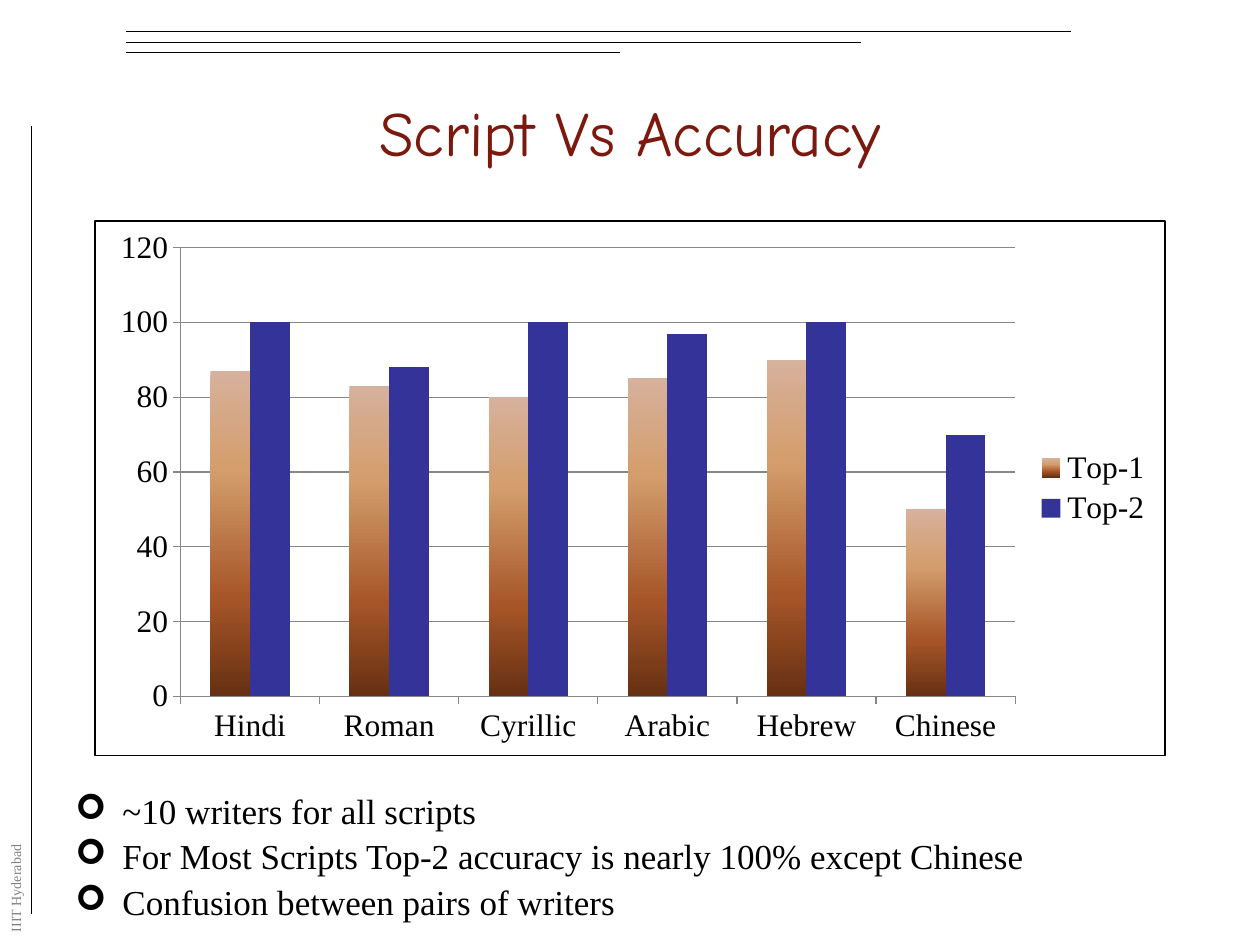
from dataclasses import dataclass

from lxml.etree import SubElement
from pptx import Presentation
from pptx.chart.data import CategoryChartData
from pptx.dml.color import RGBColor
from pptx.enum.chart import XL_CHART_TYPE, XL_LEGEND_POSITION, XL_TICK_MARK
from pptx.enum.shapes import MSO_CONNECTOR
from pptx.enum.text import MSO_ANCHOR, PP_ALIGN
from pptx.oxml import parse_xml
from pptx.oxml.ns import nsdecls, qn
from pptx.util import Cm, Pt


@dataclass(frozen=True)
class Theme:
    ink: str = "000000"
    title: str = "7B190F"
    muted: str = "808080"
    grid: str = "878787"
    second: str = "333399"
    fade: tuple = ((0, "D6B19C"), (30, "D49E6C"), (70, "A65528"), (100, "663012"))
    head: str = "Comic Neue"
    body: str = "Times New Roman"
    big: float = 36
    mid: float = 20
    label: float = 18
    small: float = 8
    thin: float = 0.75


def write(para, text, *, font, size, color, align=PP_ALIGN.LEFT, bullet=None,
          indent=0, before=0, spacing=None):
    """Write one formatted paragraph."""
    props = para._p.get_or_add_pPr()
    if bullet:
        SubElement(props, qn("a:buFont"), typeface="Wingdings")
        SubElement(props, qn("a:buChar"), char=bullet)
        props.set("marL", str(Cm(indent)))
        props.set("indent", str(-Cm(indent)))
    para.alignment = align
    if before:
        para.space_before = Pt(before)
    if spacing:
        para.line_spacing = spacing
    run = para.add_run()
    run.text = text
    run.font.name = font
    run.font.size = Pt(size)
    run.font.color.rgb = RGBColor.from_string(color)


class Deck:
    """Hold the style and the current slide."""

    def __init__(self, theme):
        """Open a deck with one blank slide."""
        self.theme = theme
        self.file = Presentation()
        self.file.slide_width, self.file.slide_height = Cm(25.4), Cm(19.05)
        self.slide = self.file.slides.add_slide(self.file.slide_layouts[6])

    def stroke(self, line, color):
        """Give a line the thin style."""
        line.color.rgb = RGBColor.from_string(color)
        line.width = Pt(self.theme.thin)

    def rule(self, *ends):
        """Draw a thin straight line."""
        line = self.slide.shapes.add_connector(MSO_CONNECTOR.STRAIGHT, *map(Cm, ends))
        self.stroke(line.line, self.theme.ink)
        SubElement(line._element.spPr, qn("a:effectLst"))

    def text(self, place, lines, *, anchor=MSO_ANCHOR.TOP, turn=0, wrap=True,
             before=0, **style):
        """Add a text box with one paragraph a line."""
        box = self.slide.shapes.add_textbox(*map(Cm, place))
        box.rotation = turn
        frame = box.text_frame
        frame.word_wrap = wrap
        frame.vertical_anchor = anchor
        for index, line in enumerate(lines):
            para = frame.add_paragraph() if index else frame.paragraphs[0]
            write(para, line, before=before if index else 0, **style)

    def chart(self, place, names, rows, layout):
        """Add the framed column chart."""
        theme = self.theme
        data = CategoryChartData()
        data.categories = names
        for name, values in rows.items():
            data.add_series(name, values)
        chart = self.slide.shapes.add_chart(
            XL_CHART_TYPE.COLUMN_CLUSTERED, *map(Cm, place), data).chart
        chart.font.name, chart.font.size = theme.body, Pt(theme.label)
        chart.font.color.rgb = RGBColor.from_string(theme.ink)
        chart.has_title = False
        chart.has_legend = True
        chart.legend.position = XL_LEGEND_POSITION.RIGHT
        chart.legend.include_in_layout = False
        plot = chart.plots[0]
        plot.gap_width, plot.overlap, plot.vary_by_categories = 150, 0, False
        for axis in (chart.category_axis, chart.value_axis):
            axis.major_tick_mark = XL_TICK_MARK.OUTSIDE
            self.stroke(axis.format.line, theme.grid)
        scale = chart.value_axis
        scale.minimum_scale, scale.maximum_scale, scale.major_unit = 0, 120, 20
        self.stroke(scale.major_gridlines.format.line, theme.grid)
        first, second = plot.series
        self.fade(first)
        second.format.fill.solid()
        second.format.fill.fore_color.rgb = RGBColor.from_string(theme.second)
        self.frame(chart)
        self.fix(chart, layout)

    def fade(self, series):
        """Fill a series with the theme gradient."""
        stops = "".join(
            f'<a:gs pos="{spot * 1000}"><a:srgbClr val="{color}"/></a:gs>'
            for spot, color in self.theme.fade)
        series._element.get_or_add_spPr().insert(0, parse_xml(
            f'<a:gradFill {nsdecls("a")} rotWithShape="1"><a:gsLst>{stops}</a:gsLst>'
            '<a:lin ang="5400000" scaled="0"/></a:gradFill>'))

    def frame(self, chart):
        """Draw a border around the chart."""
        width = Pt(self.theme.thin)
        chart._chartSpace.find(qn("c:chart")).addnext(parse_xml(
            f'<c:spPr {nsdecls("c", "a")}><a:noFill/><a:ln w="{width}"><a:solidFill>'
            f'<a:srgbClr val="{self.theme.ink}"/></a:solidFill></a:ln></c:spPr>'))

    def fix(self, chart, layout):
        """Place the inner plot area by fractions."""
        area = chart._chartSpace.find(".//" + qn("c:plotArea"))
        old = area.find(qn("c:layout"))
        if old is not None:
            area.remove(old)
        parts = "".join(f'<c:{key}Mode val="edge"/>' for key in "xy")
        parts += "".join(f'<c:{key} val="{size}"/>' for key, size in zip("xywh", layout))
        area.insert(0, parse_xml(
            f'<c:layout {nsdecls("c")}><c:manualLayout><c:layoutTarget val="inner"/>'
            f'{parts}</c:manualLayout></c:layout>'))


def main():
    """Build and save the slide."""
    theme = Theme()
    deck = Deck(theme)
    for step, right in enumerate((21.59, 17.35, 12.5)):
        top = 0.64 + 0.21 * step
        deck.rule(2.54, top, right, top)
    deck.rule(0.64, 2.54, 0.64, 18.42)
    deck.text((-0.86, 17.58, 2.34, 0.58), ["IIIT Hyderabad"], turn=270, wrap=False,
              font=theme.body, size=theme.small, color=theme.muted)
    deck.text((1.9, 1.06, 21.6, 3.18), ["Script Vs Accuracy"],
              anchor=MSO_ANCHOR.MIDDLE, align=PP_ALIGN.CENTER,
              font=theme.head, size=theme.big, color=theme.title)
    deck.chart((1.9, 4.44, 21.6, 10.8),
               ["Hindi", "Roman", "Cyrillic", "Arabic", "Hebrew", "Chinese"],
               {"Top-1": (87, 83, 80, 85, 90, 50), "Top-2": (100, 88, 100, 97, 100, 70)},
               (0.08, 0.05, 0.78, 0.84))
    deck.text((1.27, 15.88, 23.3, 2.75),
              ["~10 writers for all scripts",
               "For Most Scripts Top-2 accuracy is nearly 100% except Chinese",
               "Confusion between pairs of writers"],
              bullet="➢", indent=0.95, before=4.6, spacing=0.9,
              font=theme.body, size=theme.mid, color=theme.ink)
    deck.file.save("out.pptx")


if __name__ == "__main__":
    main()
